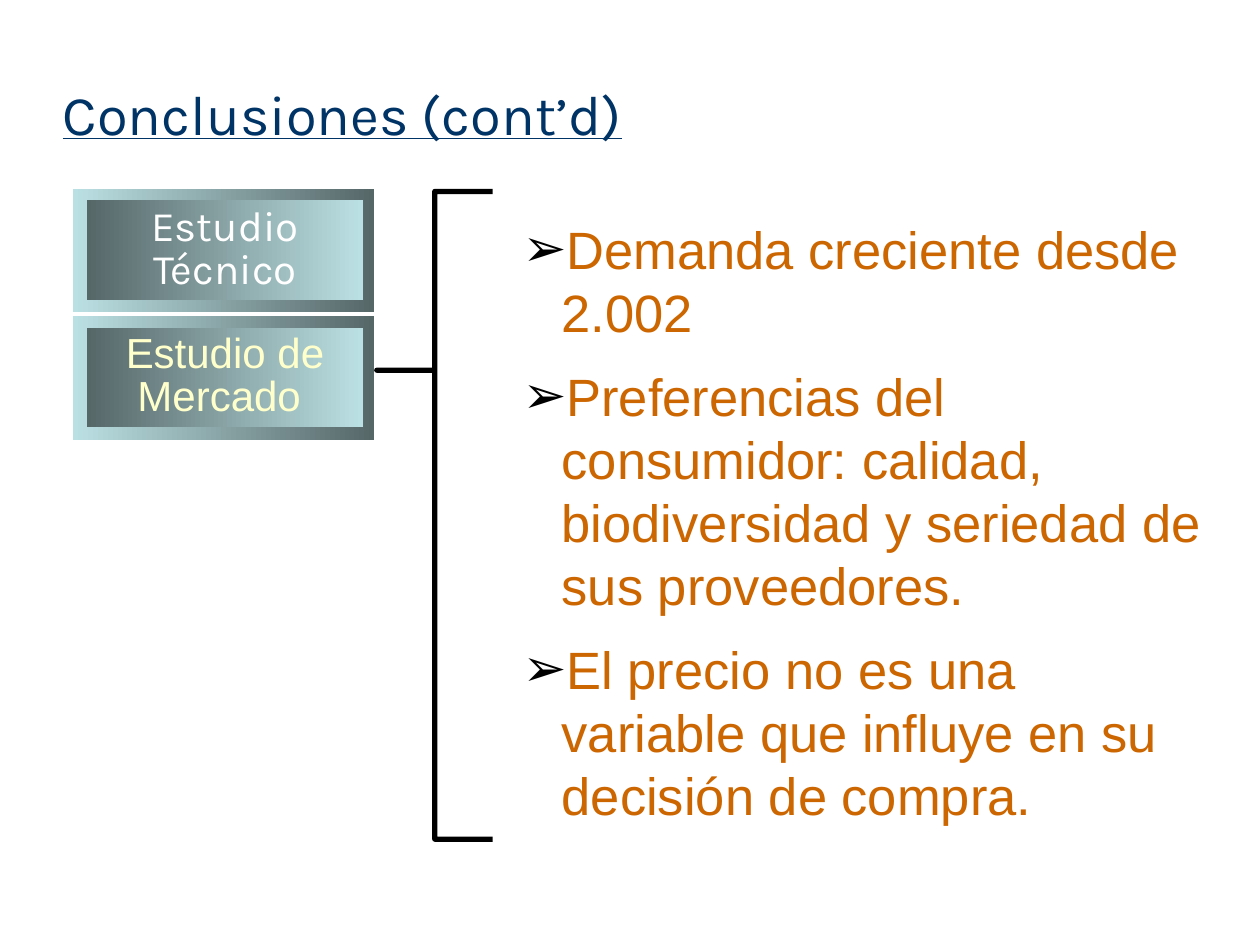
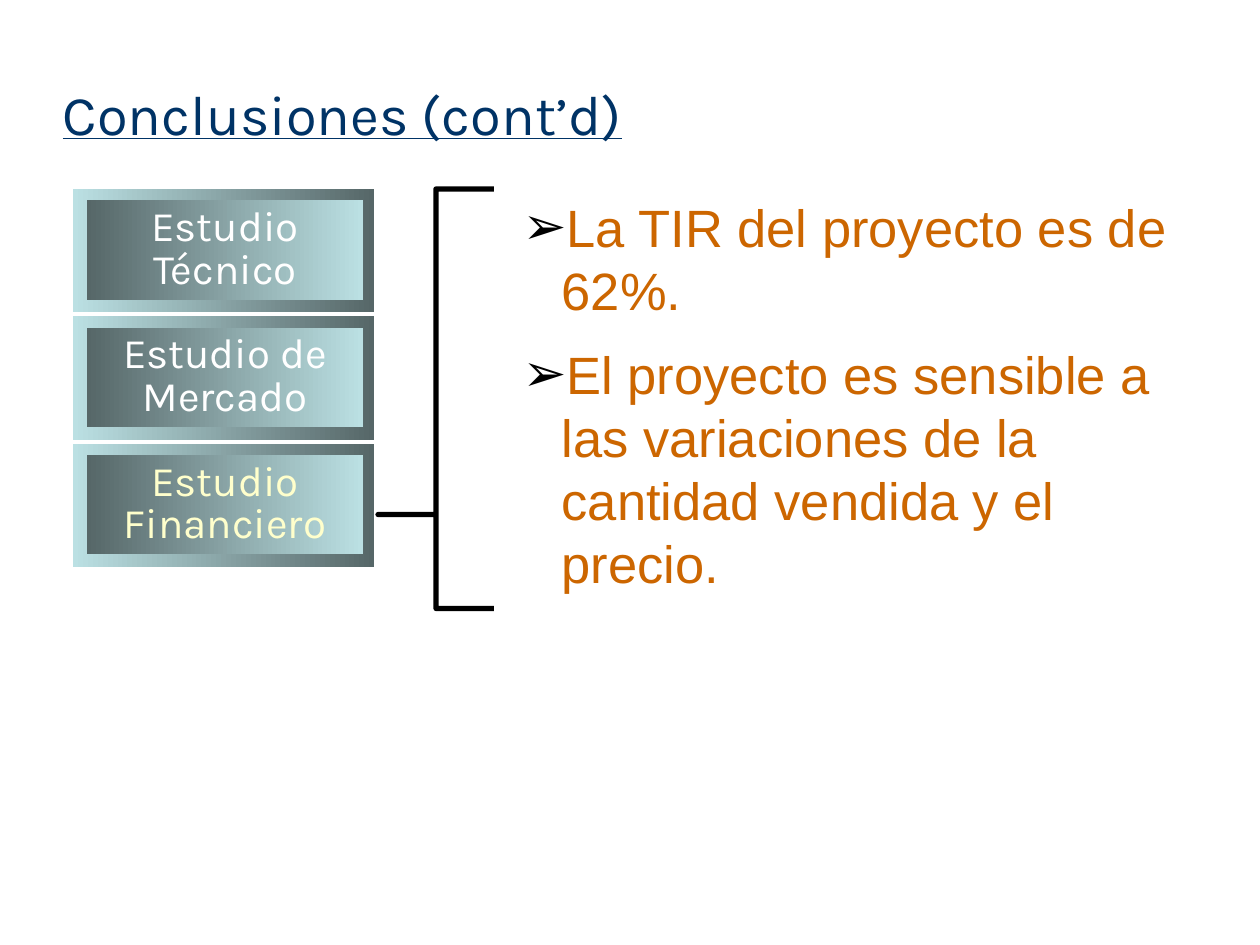
import pptx
import pptx.util
import pptx.dml.color
import pptx.enum.shapes
import pptx.enum.text
import pptx.oxml.ns
from lxml import etree

Inches = pptx.util.Inches
Pt = pptx.util.Pt
SHAPE = pptx.enum.shapes.MSO_SHAPE
ALIGN = pptx.enum.text.PP_ALIGN
ANCHOR = pptx.enum.text.MSO_ANCHOR

COLORS = {
    "title": "003366",
    "pale": "BBE0E3",
    "dark": "566768",
    "label": "FFFFFF",
    "active": "FFFFCC",
    "point": "CC6600",
    "line": "000000",
}


def color(name):
    return pptx.dml.color.RGBColor.from_string(COLORS[name])


class Deck:
    head = "Karla"
    body = "Arial"

    def __init__(self):
        self.prs = pptx.Presentation()
        self.prs.slide_width = Inches(10)
        self.prs.slide_height = Inches(7.5)
        self.slide = None

    def new(self, title):
        self.slide = self.prs.slides.add_slide(self.prs.slide_layouts[6])
        frame = self.text(0.5, 0.58, 9, 0.63)
        frame.margin_left = frame.margin_right = 0
        run = self.run(frame.paragraphs[0], title, 32, self.head, "title")
        run.font.underline = True

    def text(self, x, y, w, h):
        box = self.slide.shapes.add_textbox(Inches(x), Inches(y), Inches(w), Inches(h))
        box.text_frame.word_wrap = True
        return box.text_frame

    def run(self, para, text, size, font, tint):
        run = para.add_run()
        run.text = text
        run.font.size = Pt(size)
        run.font.name = font
        run.font.color.rgb = color(tint)
        return run

    def panel(self, group, x, y, w, h, tints):
        rect = group.shapes.add_shape(
            SHAPE.RECTANGLE, Inches(x), Inches(y), Inches(w), Inches(h))
        rect.shadow.inherit = False
        rect.line.fill.background()
        rect.fill.gradient()
        rect.fill.gradient_angle = 0
        for stop, tint in zip(rect.fill.gradient_stops, tints):
            stop.color.rgb = color(tint)
        return rect

    def button(self, row, label, tint, font):
        top = 1.5 + row * 1.01
        group = self.slide.shapes.add_group_shape()
        self.panel(group, 0.58, top, 2.39, 0.98, ("pale", "dark"))
        face = self.panel(group, 0.69, top + 0.09, 2.19, 0.79, ("dark", "pale"))
        frame = face.text_frame
        frame.word_wrap = True
        frame.vertical_anchor = ANCHOR.MIDDLE
        para = frame.paragraphs[0]
        para.alignment = ALIGN.CENTER
        para.line_spacing = 0.85
        self.run(para, label, 24, font, tint)

    def menu(self, labels, font):
        for row, label in enumerate(labels):
            last = row == len(labels) - 1
            self.button(row, label, "active" if last else "label",
                        font if last else self.head)

    def bullet(self, para):
        props = para._p.get_or_add_pPr()
        props.set("marL", str(Inches(0.81)))
        props.set("indent", str(Inches(-0.31)))
        name = pptx.oxml.ns.qn
        tint = etree.SubElement(props, name("a:buClr"))
        etree.SubElement(tint, name("a:srgbClr"), val=COLORS["line"])
        etree.SubElement(props, name("a:buFont"), typeface=self.body)
        etree.SubElement(props, name("a:buChar"), char="➢")

    def points(self, top, lines):
        frame = self.text(3.55, top, 6.12, 4.89)
        for i, line in enumerate(lines):
            para = frame.add_paragraph() if i else frame.paragraphs[0]
            para.space_before = Pt(12 if i else 0)
            self.bullet(para)
            self.run(para, line, 30, self.body, "point")

    def brace(self, x, y, h, tip):
        brace = self.slide.shapes.add_shape(
            SHAPE.LEFT_BRACE, Inches(x), Inches(y), Inches(0.92), Inches(h))
        brace.shadow.inherit = False
        brace.adjustments[0] = 0
        brace.adjustments[1] = tip
        brace.fill.background()
        brace.line.color.rgb = color("line")
        brace.line.width = Pt(3)


def main():
    deck = Deck()
    title = "Conclusiones (cont’d)"

    deck.new(title)
    deck.menu(["Estudio Técnico", "Estudio de Mercado "], deck.body)
    deck.points(1.67, [
        "Demanda creciente desde 2.002",
        "Preferencias del consumidor: calidad, biodiversidad y seriedad de sus proveedores.",
        "El precio no es una variable que influye en su decisión de compra.",
    ])
    deck.brace(2.99, 1.52, 5.14, 0.276)

    deck.new(title)
    deck.menu(["Estudio Técnico", "Estudio de Mercado", "Estudio Financiero"], deck.head)
    deck.points(1.5, [
        "La TIR del proyecto es de 62%.",
        "El proyecto es sensible a las variaciones de la cantidad vendida y el precio.",
    ])
    deck.brace(3, 1.5, 3.33, 0.776)

    deck.prs.save("out.pptx")


if __name__ == "__main__":
    main()
